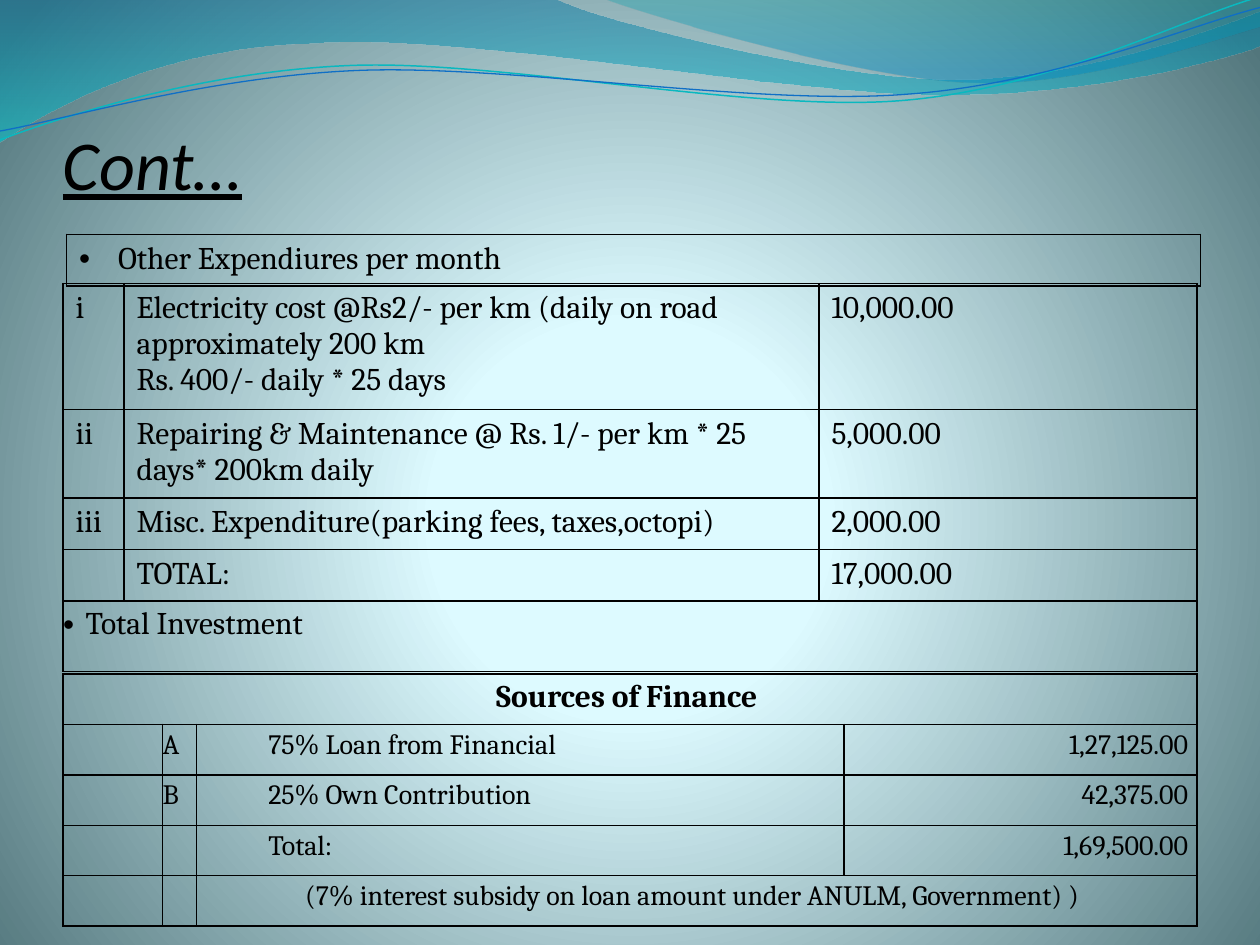
from math import cos, radians, sin

from lxml import etree
from pptx import Presentation
from pptx.dml.color import RGBColor
from pptx.enum.text import MSO_ANCHOR, PP_ALIGN as Align
from pptx.oxml import parse_xml
from pptx.oxml.ns import qn
from pptx.util import Inches, Pt

NS = ('xmlns:a="http://schemas.openxmlformats.org/drawingml/2006/main" '
      'xmlns:p="http://schemas.openxmlformats.org/presentationml/2006/main"')
BLACK = RGBColor(0x00, 0x00, 0x00)
PALE = RGBColor(0xDE, 0xFB, 0xFF)
PALE_EDGE = RGBColor(0xDD, 0xFA, 0xFF)
SLATE = RGBColor(0x52, 0x76, 0x7C)
BLUE = RGBColor(0x0F, 0x6F, 0xC6)
TEAL = RGBColor(0x0A, 0xB8, 0xBF)
DEEP_BLUE = RGBColor(0x00, 0x74, 0xA1)
AQUA = RGBColor(0x00, 0xC6, 0xCF)
DEEP_TEAL = RGBColor(0x00, 0xA1, 0xA9)
SKY = RGBColor(0x00, 0x8B, 0xBF)
DOWNWARD = '<a:lin ang="5400000" scaled="0"/>'
RADIAL = ('<a:path path="circle"><a:fillToRect l="10000" t="110000" '
          'r="10000" b="100000"/></a:path>')
TILT = -2.7  # degrees

# Waves on a grid of a tenth of the slide's width: 2 numbers make a line, 6 a curve
BROAD_WAVE = [(0, 0), (4.4, -0.01), (4.76, 0.17, 6.64, 0.63, 7.58, 0.63),
              (8.53, 0.63, 9.58, 0.26, 10, 0.09), (10.01, 0.36),
              (9.83, 0.44, 8.7, 0.76, 7.46, 0.75),
              (6.22, 0.75, 3.82, 0.28, 2.57, 0.34),
              (1.29, 0.36, 0.46, 0.83, -0.01, 1.13), (0, 0)]
RIGHT_WAVE = [(4.79, -0.01), (5.09, 0.11, 6.82, 0.62, 7.69, 0.65),
              (8.56, 0.69, 9.61, 0.32, 10, 0.21), (10, 0), (4.79, -0.01)]
TEAL_CURVE = [(0, 1.11), (0.48, 0.93, 1.58, 0.57, 2.77, 0.52),
              (3.95, 0.47, 5.93, 0.89, 7.13, 0.8),
              (8.33, 0.71, 9.38, 0.15, 9.98, -0.02)]
BLUE_CURVE = [(0, 1.04), (0.47, 0.96, 1.64, 0.61, 2.83, 0.56),
              (4.03, 0.51, 5.97, 0.84, 7.17, 0.75),
              (8.36, 0.67, 9.41, 0.21, 10, 0.06)]


def gradient(stops, direction):
    marks = "".join(
        f'<a:gs pos="{pos * 1000}"><a:srgbClr val="{color}">'
        f'<a:alpha val="{alpha * 1000}"/></a:srgbClr></a:gs>'
        for pos, color, alpha in stops)
    return f'<a:gradFill {NS} rotWithShape="1"><a:gsLst>{marks}</a:gsLst>{direction}</a:gradFill>'


def background(slide):
    fill = gradient([(0, PALE, 100), (25, PALE_EDGE, 100), (100, SLATE, 100)], RADIAL)
    slide.element.cSld.insert(0, parse_xml(
        f"<p:bg {NS}><p:bgPr>{fill}<a:effectLst/></p:bgPr></p:bg>"))


def turn(point, center, degrees):
    dx, dy = point[0] - center[0], point[1] - center[1]
    c, s = cos(radians(degrees)), sin(radians(degrees))
    return center[0] + dx * c - dy * s, center[1] + dx * s + dy * c


def bend(shape, segments):
    """Join each three straight steps of a curve into one Bezier step."""
    steps = iter(list(shape.element.iter(qn("a:lnTo"))))
    for segment in segments:
        first = next(steps)
        if len(segment) == 6:
            first.tag = qn("a:cubicBezTo")
            for _ in range(2):
                step = next(steps)
                first.append(step[0])
                step.getparent().remove(step)


def header_waves(slide, box):
    left, top, width, _ = box
    unit = width / 10

    def wave(path, center=(0, 0), tilt=0):
        knots = [turn(part[i:i + 2], center, -tilt)
                 for part in path for i in range(0, len(part), 2)]
        points = [(round(x * unit), round(y * unit)) for x, y in knots]
        builder = slide.shapes.build_freeform(*points[0])
        builder.add_line_segments(points[1:], close=path[0] == path[-1])
        shape = builder.convert_to_shape(left, top)
        bend(shape, path[1:])
        shape.rotation = tilt
        shape.shadow.inherit = False
        return shape

    # Filled bands
    for path, stops in ((BROAD_WAVE, [(0, DEEP_BLUE, 45), (100, AQUA, 55)]),
                        (RIGHT_WAVE, [(0, DEEP_TEAL, 30), (80, SKY, 45)])):
        band = wave(path)
        band.line.fill.background()
        band.element.spPr.insert(2, parse_xml(gradient(stops, DOWNWARD)))
    # Thin tilted curves
    for path, center, color, weight in ((TEAL_CURVE, (4.99, 0.57), TEAL, 0.85),
                                        (BLUE_CURVE, (5, 0.59), BLUE, 0.75)):
        curve = wave(path, center, TILT)
        curve.fill.background()
        curve.line.color.rgb = color
        curve.line.width = Pt(weight)


def style_font(font, **formats):
    font.color.rgb = BLACK
    for name, value in formats.items():
        setattr(font, name, value)


def title(slide, box, words):
    heading = slide.shapes.add_textbox(*box).text_frame
    for name, value in dict(word_wrap=True, vertical_anchor=MSO_ANCHOR.BOTTOM,
                            margin_left=0, margin_right=0, margin_bottom=0).items():
        setattr(heading, name, value)
    run = heading.paragraphs[0].add_run()
    run.text = words
    style_font(run.font, name="Calibri", size=Pt(40), italic=True, underline=True)


def outline(cell):
    cell.fill.background()
    tc_pr = cell._tc.get_or_add_tcPr()
    for i, side in enumerate("LRTB"):
        tc_pr.insert(i, parse_xml(
            f'<a:ln{side} {NS} w="12700"><a:solidFill><a:srgbClr val="{BLACK}"/>'
            f"</a:solidFill></a:ln{side}>"))


def write(cell, words, size=18, bold=False, align=Align.LEFT, indent=0,
          bullet=0, spacing=None, margins=None):
    if margins:
        (cell.margin_left, cell.margin_top,
         cell.margin_right, cell.margin_bottom) = map(Inches, margins)
    if not words:
        return
    cell.text = words
    for paragraph in cell.text_frame.paragraphs:
        paragraph.alignment = align
        if spacing:
            paragraph.line_spacing = spacing
        p_pr = paragraph._p.get_or_add_pPr()
        p_pr.set("marL", str(Inches(indent or bullet)))
        p_pr.set("indent", str(-Inches(bullet)))
        if bullet:
            etree.SubElement(p_pr, qn("a:buFont")).set("typeface", "Arial")
            etree.SubElement(p_pr, qn("a:buChar")).set("char", "•")
        for run in paragraph.runs:
            style_font(run.font, name="Cambria", size=Pt(size), bold=bold)


def ledger(slide, box, columns, row_height, rows, formats, spans=None):
    """Table whose column weights share out the box; rows grow with their text."""
    spans = spans or {}
    frame = slide.shapes.add_table(len(rows), len(columns), *box)
    table = frame.table
    table.first_row = table.horz_banding = False
    for column, weight in zip(table.columns, columns):
        column.width = round(box[2] * weight / sum(columns))
    for r, row in enumerate(rows):
        table.rows[r].height = row_height
        for c, words in enumerate(row):
            cell = table.cell(r, c)
            outline(cell)
            write(cell, words, **{**formats[c], **spans.get((r, c), (0, {}))[1]})
    for (r, c), (last, _) in spans.items():
        table.cell(r, c).merge(table.cell(r, last))
    frame.height = box[3]


def main():
    prs = Presentation()
    prs.slide_width, prs.slide_height = Inches(10), Inches(7.5)
    slide = prs.slides.add_slide(prs.slide_layouts[6])

    def area(left, top, width, height):
        """Percentages of the slide's size."""
        return [round(share * size / 100) for share, size in
                zip((left, top, width, height), (prs.slide_width, prs.slide_height) * 2)]

    background(slide)
    header_waves(slide, area(0, 0, 100, 15))
    title(slide, area(5, 10.27, 90, 11.33), "Cont…")

    # Monthly expenditure
    line = Inches(0.41)
    ledger(slide, area(5.28, 24.8, 90, 5.4), [1], line,
           [["Other Expendiures per month"]], [dict(bullet=0.31)])
    ledger(slide, area(5, 30, 90, 33.47), [48.5, 551.5, 300], line, [
        ["i", "Electricity cost @Rs2/- per km (daily on road approximately 200 km\n"
              "Rs. 400/- daily * 25 days", "10,000.00"],
        ["ii", "Repairing & Maintenance @ Rs. 1/- per km * 25 days* 200km daily", "5,000.00"],
        ["iii", "Misc. Expenditure(parking fees, taxes,octopi)", "2,000.00"],
        ["", "TOTAL:", "17,000.00"]], [{}] * 3)

    # Investment and its sources
    tight = dict(spacing=1.15, margins=(0, 0, 0.03, 0))
    small = dict(tight, size=16)
    ledger(slide, area(5, 63.6, 90, 7.5), [1], Inches(0.56),
           [["Total Investment"]], [dict(tight, bullet=0.18)])
    ledger(slide, area(5, 71.33, 90, 27), [79, 27, 514, 280], Inches(0.4), [
        ["Sources of Finance", "", "", ""],
        ["", "A", "75% Loan from Financial", "1,27,125.00"],
        ["", "B", "25% Own Contribution", "42,375.00"],
        ["", "", "Total:", "1,69,500.00"],
        ["", "", "(7% interest subsidy on loan amount under ANULM, Government) )", ""]],
        [small, dict(small, align=Align.JUSTIFY), dict(small, indent=0.57),
         dict(small, align=Align.RIGHT, margins=(0, 0, 0.07, 0))],
        {(0, 0): (3, dict(size=18, bold=True, align=Align.CENTER, margins=(0, 0, 0.05, 0))),
         (4, 2): (3, dict(align=Align.CENTER, indent=0, margins=(0, 0, 0.07, 0)))})
    prs.save("out.pptx")


if __name__ == "__main__":
    main()
